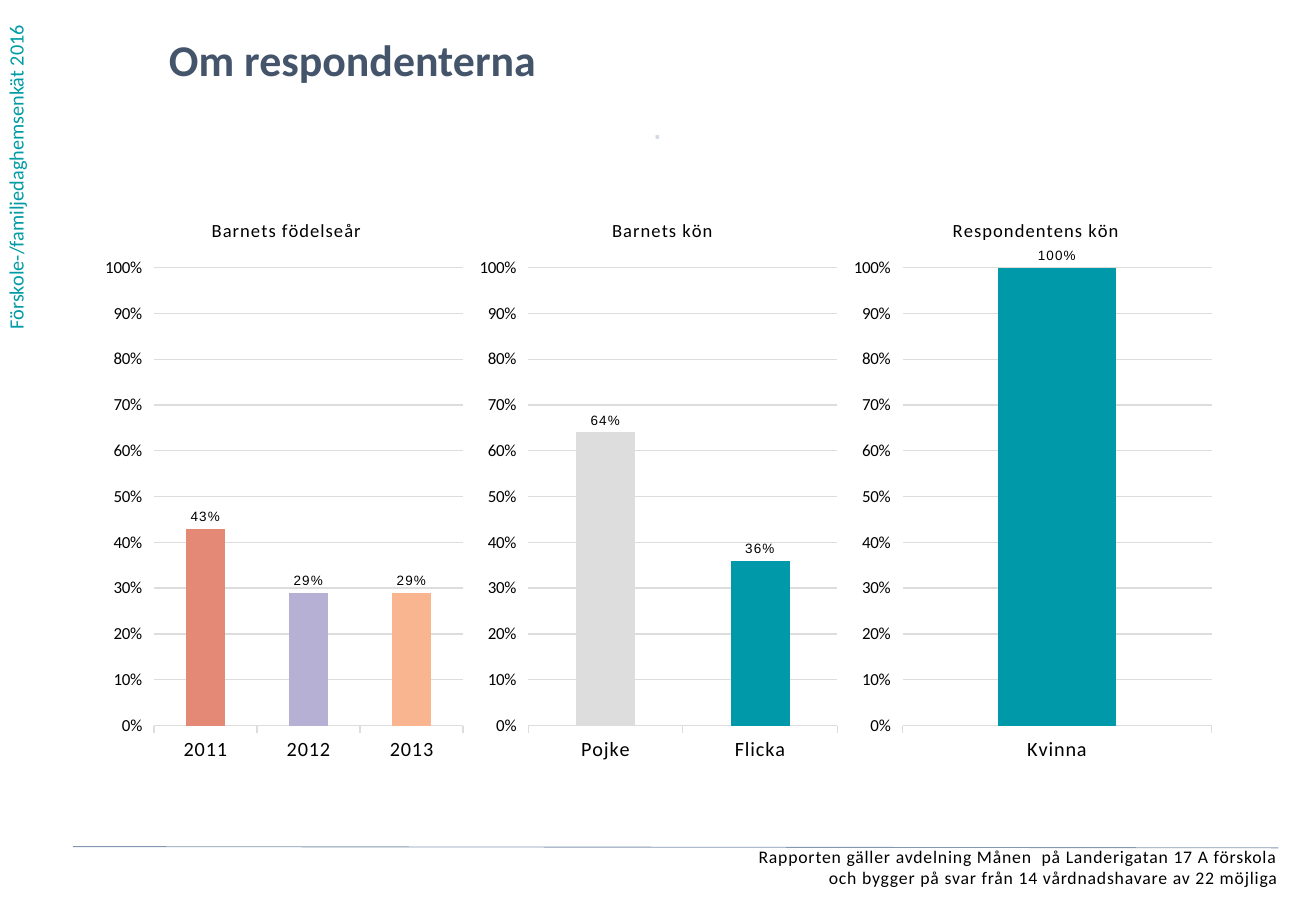
"""Build the slide about the survey respondents, with three column charts."""
import pptx
import pptx.chart.data
import pptx.dml.color
import pptx.enum.chart
import pptx.enum.shapes
import pptx.enum.text
import pptx.oxml.ns
import pptx.util
from lxml import etree

Inches, Pt = pptx.util.Inches, pptx.util.Pt
RGBColor = pptx.dml.color.RGBColor
qn = pptx.oxml.ns.qn
Align = pptx.enum.text.PP_ALIGN

TEAL = RGBColor(0x00, 0x99, 0xAA)
SURVEY_TEAL = RGBColor(0x00, 0x9B, 0xA4)
CORAL = RGBColor(0xE5, 0x89, 0x77)
LILAC = RGBColor(0xB6, 0xB1, 0xD4)
PEACH = RGBColor(0xF9, 0xB5, 0x90)
GREY = RGBColor(0xDD, 0xDD, 0xDD)
PALE = RGBColor(0xD2, 0xD9, 0xE2)
NAVY = RGBColor(0x44, 0x54, 0x6A)
RULE_BLUE = RGBColor(0x84, 0x97, 0xB0)
BLACK = RGBColor(0x00, 0x00, 0x00)

SURVEY = "Förskole-/familjedaghemsenkät 2016"
HEADING = "Om respondenterna"
SEPARATOR = "⋅"
SCOPE = ("Rapporten gäller avdelning Månen  på Landerigatan 17 A förskola\v"
         "och bygger på svar från 14 vårdnadshavare av 22 möjliga")
QUESTIONS = [
    {"title": "Barnets födelseår", "title_x": 0.3,
     "answers": [("2013", 0.29, PEACH), ("2012", 0.29, LILAC), ("2011", 0.43, CORAL)]},
    {"title": "Barnets kön", "title_x": 0.37,
     "answers": [("Flicka", 0.36, TEAL), ("Pojke", 0.64, GREY)]},
    {"title": "Respondentens kön", "title_x": 0.28,
     "answers": [("Kvinna", 1, TEAL)]},
]

CHART_LEFT, CHART_TOP, CHART_WIDTH, CHART_HEIGHT = 0.79, 1.6, 3.08, 4.76
PERCENT = "0%;0%"


def style_font(font, size, color=BLACK, bold=False, name="Calibri", spaced=False):
    """Apply one text style, optionally with half a point of letter spacing."""
    font.size, font.bold, font.name = Pt(size), bold, name
    font.color.rgb = color
    if spaced:
        font._rPr.set("spc", "50")


def fill_text(frame, text, size, color, align=Align.LEFT, margins=0, **style):
    """Write one styled paragraph into a text frame."""
    frame.word_wrap = True
    frame.auto_size = pptx.enum.text.MSO_AUTO_SIZE.NONE
    frame.vertical_anchor = pptx.enum.text.MSO_ANCHOR.TOP
    frame.margin_left = frame.margin_right = Inches(2 * margins)
    frame.margin_top = frame.margin_bottom = Inches(margins)
    frame.text = text
    paragraph = frame.paragraphs[0]
    paragraph.alignment = align
    style_font(paragraph.font, size, color, **style)


def add_text(slide, box, *content, **style):
    """Add a text box and return its frame."""
    frame = slide.shapes.add_textbox(*map(Inches, box)).text_frame
    fill_text(frame, *content, **style)
    return frame


def set_layout(parent, position, **fractions):
    """Place a chart part at fractions of the chart's size."""
    for old in parent.findall(qn("c:layout")):
        parent.remove(old)
    layout = etree.Element(qn("c:layout"))
    manual = etree.SubElement(layout, qn("c:manualLayout"))
    if "w" in fractions:
        etree.SubElement(manual, qn("c:layoutTarget")).set("val", "inner")
    for tag, value in {"xMode": "edge", "yMode": "edge", **fractions}.items():
        etree.SubElement(manual, qn("c:" + tag)).set("val", str(value))
    parent.insert(position, layout)


def style_axes(chart):
    """Format the reversed category axis and the percentage axis."""
    answers, share = chart.category_axis, chart.value_axis
    answers.reverse_order = True
    answers.has_major_gridlines = False
    share.minimum_scale, share.maximum_scale, share.major_unit = 0, 1, 0.1
    share.tick_label_position = pptx.enum.chart.XL_TICK_LABEL_POSITION.HIGH
    share.tick_labels.number_format = PERCENT
    share.tick_labels.number_format_is_linked = False
    share.format.line.fill.background()
    for line in (answers.format.line, share.major_gridlines.format.line):
        line.color.rgb = GREY
        line.width = Pt(0.75)
    for axis, size in ((answers, 12), (share, 10)):
        axis.major_tick_mark = pptx.enum.chart.XL_TICK_MARK.OUTSIDE
        style_font(axis.tick_labels.font, size, spaced=axis is answers)


def add_question(slide, index, question):
    """Add the column chart of one question."""
    names, shares, colors = zip(*question["answers"])
    data = pptx.chart.data.CategoryChartData(number_format="0%")
    data.categories = names
    data.add_series("Series 1", shares)
    box = (CHART_LEFT + index * CHART_WIDTH, CHART_TOP, CHART_WIDTH, CHART_HEIGHT)
    chart = slide.shapes.add_chart(
        pptx.enum.chart.XL_CHART_TYPE.COLUMN_CLUSTERED, *map(Inches, box), data).chart
    style_font(chart.font, 10)
    chart.has_legend = False

    title = chart.chart_title
    title.text_frame.text = question["title"]
    style_font(title.text_frame.paragraphs[0].font, 11, spaced=True)
    set_layout(title._element, 1, x=question["title_x"], y=0.035)
    title.include_in_layout = False
    set_layout(chart._chartSpace.chart.plotArea, 0, x=0.155, y=0.127, w=0.826, h=0.792)
    style_axes(chart)

    plot = chart.plots[0]
    plot.gap_width = 162
    plot.vary_by_categories = False
    columns = plot.series[0]
    columns.format.fill.solid()
    columns.format.fill.fore_color.rgb = TEAL
    for position, color in enumerate(colors):
        fill = columns.points[position].format.fill
        fill.solid()
        fill.fore_color.rgb = color
    labels = columns.data_labels
    labels.show_value = True
    labels.number_format = PERCENT
    labels.number_format_is_linked = False
    labels.position = pptx.enum.chart.XL_LABEL_POSITION.OUTSIDE_END
    style_font(labels.font, 8, name="Arial", spaced=True)


def main():
    """Assemble and save the slide."""
    deck = pptx.Presentation()
    deck.slide_width, deck.slide_height = Inches(10.83), Inches(7.5)
    slide = deck.slides.add_slide(deck.slide_layouts[5])

    heading = slide.shapes.title
    heading.left, heading.top, heading.width, heading.height = map(
        Inches, (1.39, 0.27, 8.34, 0.57))
    fill_text(heading.text_frame, HEADING, 26, NAVY, bold=True)

    survey = add_text(slide, (-0.02, 0, 0.4, 2.81), SURVEY, 12, SURVEY_TEAL, margins=0.05)
    survey._txBody.bodyPr.set("vert", "vert270")
    add_text(slide, (0.12, 6.96, 10.4, 0.43), SCOPE, 10.5, BLACK,
             align=Align.RIGHT, spaced=True)
    add_text(slide, (3.87, 1.02, 3.08, 0.39), SEPARATOR, 12, PALE,
             align=Align.CENTER, bold=True, spaced=True)

    for index, question in enumerate(QUESTIONS):
        add_question(slide, index, question)

    rule = slide.shapes.add_connector(
        pptx.enum.shapes.MSO_CONNECTOR.STRAIGHT, *map(Inches, (0.6, 6.97, 10.52, 6.98)))
    rule.line.color.rgb = RULE_BLUE
    rule.line.width = Pt(0.5)
    etree.SubElement(rule._element.spPr, qn("a:effectLst"))

    deck.save("out.pptx")


if __name__ == "__main__":
    main()
